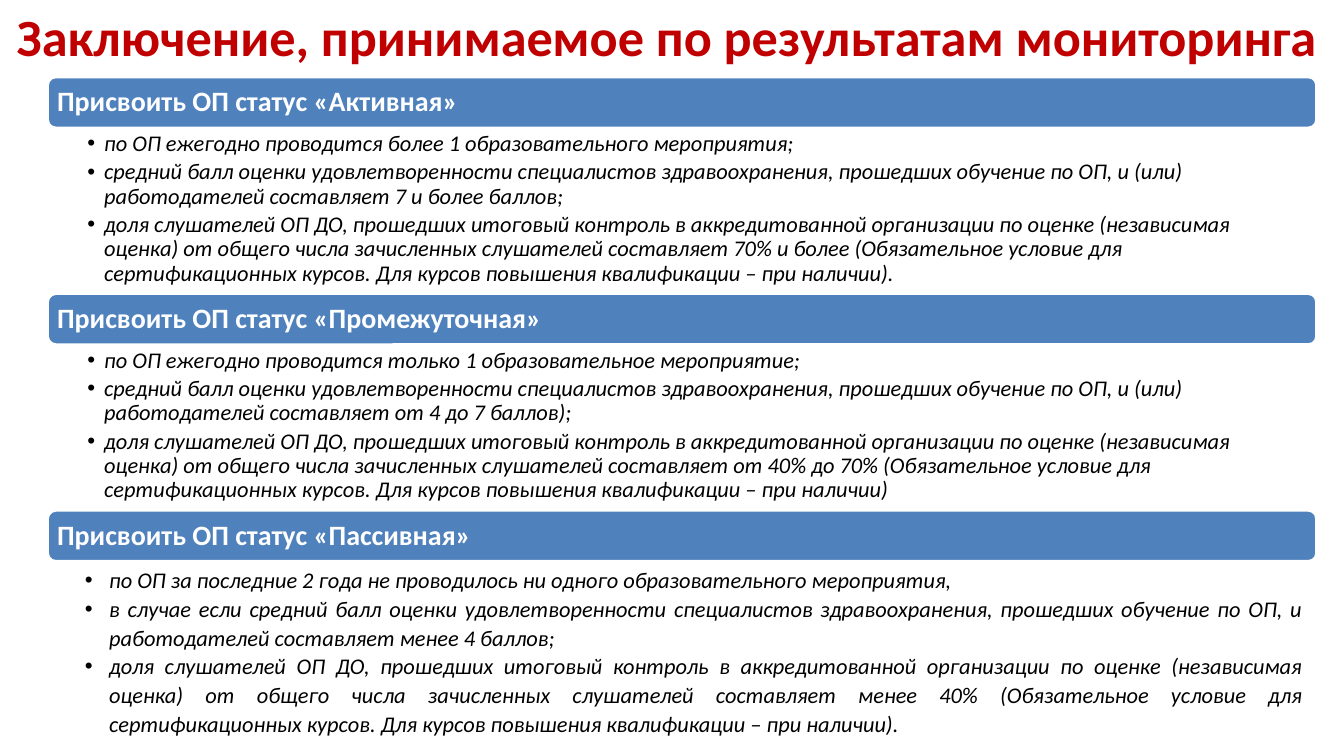
from pptx import Presentation
from pptx.dml.color import RGBColor as RGB
from pptx.enum.shapes import MSO_SHAPE as Shape
from pptx.enum.text import MSO_ANCHOR as Anchor, MSO_AUTO_SIZE as Fit, PP_ALIGN as Align
from pptx.oxml.ns import qn
from pptx.util import Pt
from lxml.etree import SubElement

# Content
TITLE = "Заключение, принимаемое по результатам мониторинга "
SCORE = "средний балл оценки удовлетворенности специалистов здравоохранения, прошедших обучение по ОП, и "
SHARE = ("доля слушателей ОП ДО, прошедших итоговый контроль в аккредитованной организации по оценке "
         "(независимая оценка) от общего числа зачисленных слушателей составляет ")
TERMS = (" (Обязательное условие для сертификационных курсов. "
         "Для курсов повышения квалификации – при наличии)")
GROUPS = [
    ("Активная", "tight", [
        "по ОП ежегодно проводится более 1 образовательного мероприятия;",
        SCORE + "(или) работодателей составляет 7 и более баллов;",
        SHARE + "70% и более" + TERMS + "."]),
    ("Промежуточная", "tight", [
        "по ОП ежегодно проводится только 1 образовательное мероприятие;",
        SCORE + "(или) работодателей составляет от 4 до 7 баллов);",
        SHARE + "от 40% до 70%" + TERMS]),
    ("Пассивная", "loose", [
        "по ОП за последние 2 года не проводилось ни одного образовательного мероприятия, ",
        "в случае если " + SCORE + "работодателей составляет менее 4 баллов;",
        SHARE + "менее 40%" + TERMS + "."]),
]

# Style: lengths in px, 160 px to the inch
PX = 5715
WIDE, HIGH = 1600, 900
FONT = "Calibri"
COLOR = {"title": "C00000", "bar": "4F81BD", "white": "FFFFFF", "text": "000000"}
LEFT, TOP, WIDTH, BAR, STEP, EDGE = 56, 91, 1512, 62, 258, 3
LISTS = {
    "tight": dict(x=56, dy=63, w=1512, h=195, pad=(48, 3, 20, 3), mar=20, hang=20,
                  line=0.9, after=2.4, align=Align.LEFT),
    "loose": dict(x=53, dy=57, w=1515, h=224, pad=(16, 8, 16, 8), mar=61, hang=29,
                  line=1.07, after=0, align=Align.JUSTIFY),
}


def place(shape, x, y, w, h):
    shape.left, shape.top, shape.width, shape.height = (v * PX for v in (x, y, w, h))


def set_frame(frame, pad, anchor):
    frame.word_wrap, frame.auto_size = True, Fit.NONE
    frame.vertical_anchor = anchor
    (frame.margin_left, frame.margin_top,
     frame.margin_right, frame.margin_bottom) = (v * PX for v in pad)


def style(para, size, color, bold=False, italic=False):
    for run in para.runs:
        font = run.font
        font.name, font.size, font.bold, font.italic = FONT, Pt(size), bold, italic
        font.color.rgb = RGB.from_string(COLOR[color])


def bullet(para, mar, hang):
    props = para._p.get_or_add_pPr()
    props.set("marL", str(mar * PX))
    props.set("indent", str(-hang * PX))
    SubElement(props, qn("a:buFont")).set("typeface", "Arial")
    SubElement(props, qn("a:buChar")).set("char", "•")


def add_bar(slide, y, text):
    bar = slide.shapes.add_shape(Shape.ROUNDED_RECTANGLE, 0, 0, PX, PX)
    place(bar, LEFT, y, WIDTH, BAR)
    bar.shadow.inherit = False
    bar.fill.solid()
    bar.fill.fore_color.rgb = RGB.from_string(COLOR["bar"])
    bar.line.color.rgb = RGB.from_string(COLOR["white"])
    bar.line.width = Pt(2)

    label = slide.shapes.add_textbox(0, 0, PX, PX)
    place(label, LEFT + EDGE, y + EDGE, WIDTH - 2 * EDGE, BAR - 2 * EDGE + 1)
    set_frame(label.text_frame, (9, 9, 9, 9), Anchor.MIDDLE)
    para = label.text_frame.paragraphs[0]
    para.text = text
    para.line_spacing = 0.9
    style(para, 15, "white", bold=True)


def fill_list(body, y, items, look):
    place(body, look["x"], y + look["dy"], look["w"], look["h"])
    frame = body.text_frame
    frame.text = "\n".join(items)
    set_frame(frame, look["pad"], Anchor.TOP)
    for para in frame.paragraphs:
        para.alignment, para.line_spacing = look["align"], look["line"]
        para.space_before, para.space_after = Pt(0), Pt(look["after"])
        bullet(para, look["mar"], look["hang"])
        style(para, 12, "text", italic=True)


def main():
    deck = Presentation()
    deck.slide_width, deck.slide_height = WIDE * PX, HIGH * PX
    slide = deck.slides.add_slide(deck.slide_layouts[4])
    title, *bodies = slide.placeholders

    # Title
    place(title, 0, 0, WIDE, 84)
    title.text_frame.text = TITLE
    set_frame(title.text_frame, (16, 8, 16, 8), Anchor.MIDDLE)
    para = title.text_frame.paragraphs[0]
    para.alignment = Align.CENTER
    style(para, 28, "title", bold=True)

    # Status bars, each with its list of conditions
    for i, ((name, look, items), body) in enumerate(zip(GROUPS, bodies)):
        y = TOP + i * STEP
        add_bar(slide, y, f"Присвоить ОП статус «{name}»")
        fill_list(body, y, items, LISTS[look])

    # Unused placeholders
    for spare in bodies[len(GROUPS):]:
        spare.element.getparent().remove(spare.element)

    deck.save("out.pptx")


if __name__ == "__main__":
    main()
